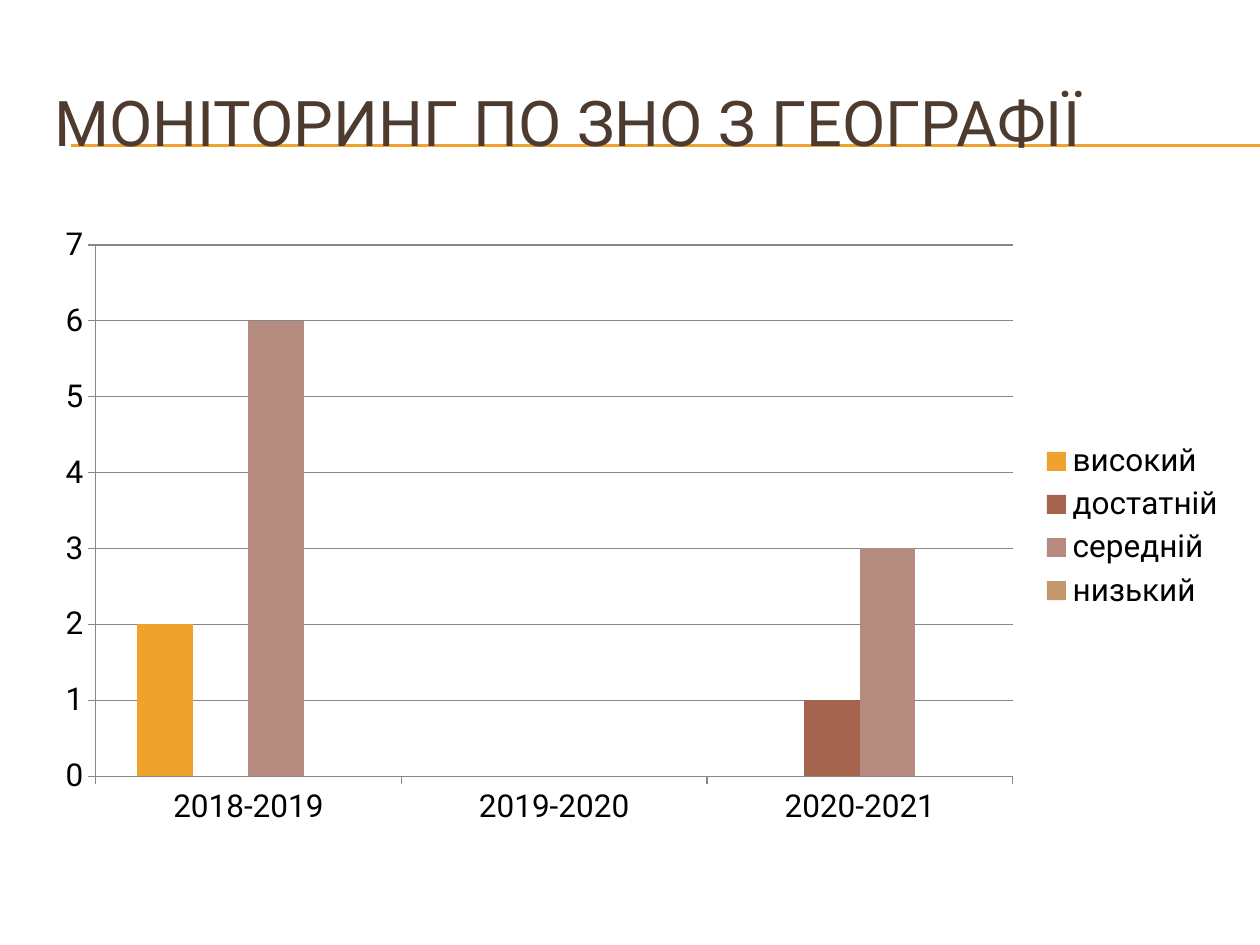
from dataclasses import dataclass

import pptx
import pptx.chart.data
import pptx.dml.color
import pptx.enum.chart
import pptx.enum.shapes
import pptx.enum.text
import pptx.oxml
import pptx.oxml.ns
import pptx.util
from pptx.util import Inches

FONT = "Roboto"
COLORS = {
    "title": "4E3B30",
    "rule": "F0A22E",
    "text": "000000",
    "axis": "878787",
    "high": "F0A22E",
    "sufficient": "A5644E",
    "middle": "B58B80",
    "low": "C3986D",
}
YEARS = ("2018-2019", "2019-2020", "2020-2021")


@dataclass(frozen=True)
class Level:
    name: str
    counts: tuple[int | None, ...]
    color: str


LEVELS = (
    Level("високий", (2, None, None), "high"),
    Level("достатній", (None, None, 1), "sufficient"),
    Level("середній", (6, None, 3), "middle"),
    Level("низький", (None, None, None), "low"),
)


def rgb(key: str) -> pptx.dml.color.RGBColor:
    return pptx.dml.color.RGBColor.from_string(COLORS[key])


def style_font(font, size: float, color: str) -> None:
    font.name = FONT
    font.size = pptx.util.Pt(size)
    font.bold = False
    font.color.rgb = rgb(color)


def style_line(line, color: str) -> None:
    line.color.rgb = rgb(color)
    line.width = pptx.util.Pt(0.75)


def add_title(slide, wording: str):
    title = slide.shapes.title
    title.left, title.top = Inches(0.33), Inches(0.5)
    title.width, title.height = Inches(9.5), Inches(0.92)
    frame = title.text_frame
    frame.text = wording
    frame.word_wrap = True
    frame.auto_size = pptx.enum.text.MSO_AUTO_SIZE.NONE
    frame.vertical_anchor = pptx.enum.text.MSO_ANCHOR.MIDDLE
    paragraph = frame.paragraphs[0]
    paragraph.alignment = pptx.enum.text.PP_ALIGN.LEFT
    style_font(paragraph.runs[0].font, 36, "title")
    return title


def add_rule(slide, title, y: float) -> None:
    """Draw a horizontal rule behind the title."""
    rule = slide.shapes.add_connector(
        pptx.enum.shapes.MSO_CONNECTOR.STRAIGHT,
        Inches(0.56), Inches(y), Inches(10), Inches(y),
    )
    style_line(rule.line, "rule")
    properties = rule.element.find(pptx.oxml.ns.qn("p:spPr"))
    properties.append(pptx.oxml.parse_xml(
        f'<a:effectLst {pptx.oxml.ns.nsdecls("a")}/>'
    ))
    title.element.addprevious(rule.element)


def add_level_chart(slide, levels: tuple[Level, ...]) -> None:
    data = pptx.chart.data.CategoryChartData(number_format="General")
    data.categories = YEARS
    for level in levels:
        data.add_series(level.name, level.counts)
    chart = slide.shapes.add_chart(
        pptx.enum.chart.XL_CHART_TYPE.COLUMN_CLUSTERED,
        Inches(0.33), Inches(1.7), Inches(9.5), Inches(4.95), data,
    ).chart
    style_font(chart.font, 18, "text")
    chart.has_title = False
    chart.has_legend = True
    chart.legend.position = pptx.enum.chart.XL_LEGEND_POSITION.RIGHT
    chart.legend.include_in_layout = False

    plot = chart.plots[0]
    plot.gap_width = 150
    plot.overlap = 0
    plot.vary_by_categories = False
    for series, level in zip(plot.series, levels):
        series.format.fill.solid()
        series.format.fill.fore_color.rgb = rgb(level.color)
        series.invert_if_negative = False

    for axis in (chart.category_axis, chart.value_axis):
        axis.major_tick_mark = pptx.enum.chart.XL_TICK_MARK.OUTSIDE
        axis.minor_tick_mark = pptx.enum.chart.XL_TICK_MARK.NONE
        style_line(axis.format.line, "axis")
    counts = chart.value_axis
    counts.minimum_scale, counts.maximum_scale, counts.major_unit = 0, 7, 1
    counts.has_major_gridlines = True
    style_line(counts.major_gridlines.format.line, "axis")


def main() -> None:
    presentation = pptx.Presentation()
    presentation.slide_width = Inches(10)
    presentation.slide_height = Inches(7.5)
    slide = presentation.slides.add_slide(presentation.slide_layouts[5])
    title = add_title(slide, "МОНІТОРИНГ ПО ЗНО З ГЕОГРАФІЇ")
    for y in (1.15, 1.16):
        add_rule(slide, title, y)
    add_level_chart(slide, LEVELS)
    presentation.save("out.pptx")


if __name__ == "__main__":
    main()
